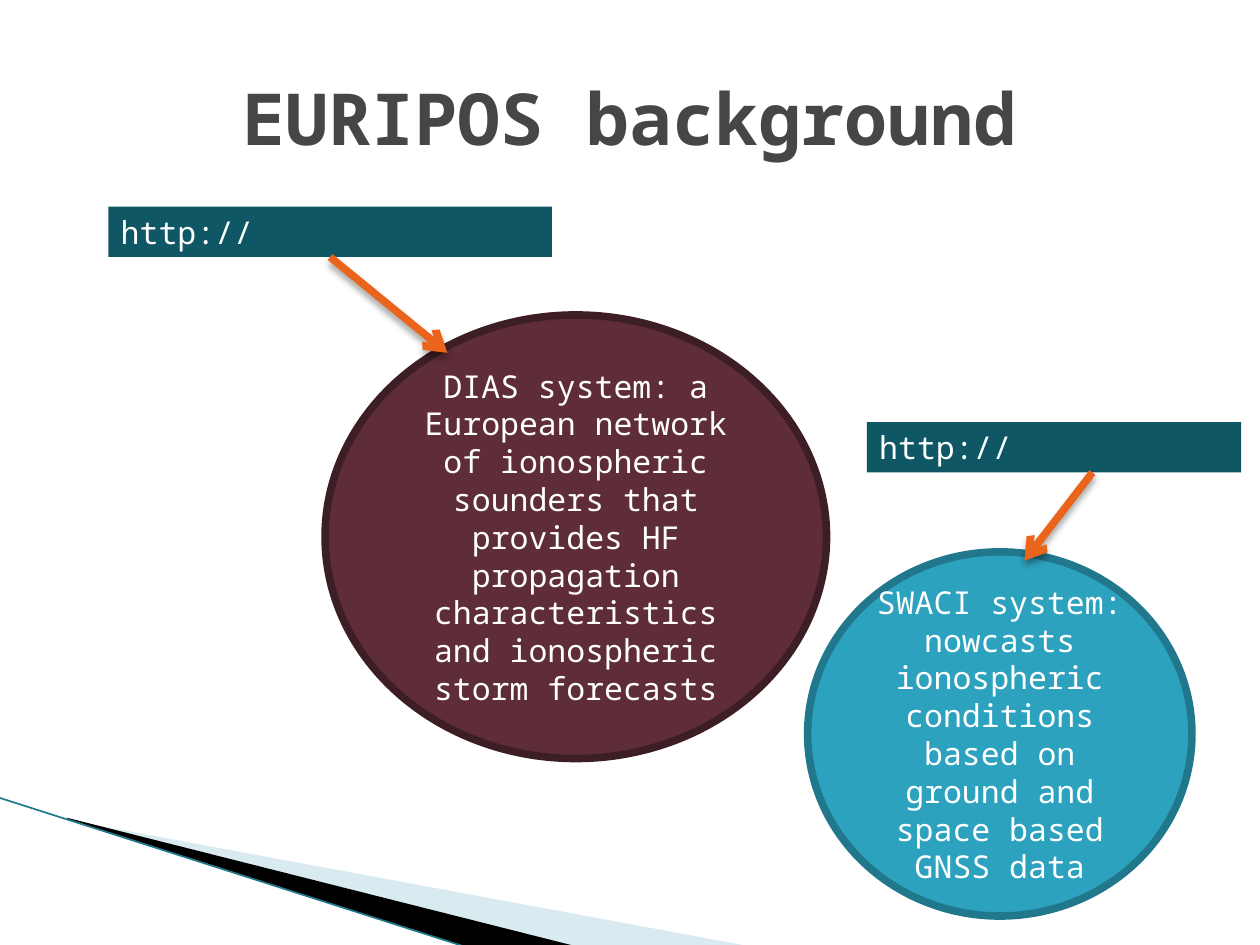
from typing import NamedTuple

from lxml import etree
from pptx import Presentation
from pptx.dml.color import RGBColor
from pptx.enum.shapes import MSO_CONNECTOR as CONN, MSO_SHAPE as SHAPE
from pptx.enum.text import MSO_ANCHOR as ANCHOR, PP_ALIGN as ALIGN
from pptx.oxml import parse_xml
from pptx.oxml.ns import nsdecls, qn
from pptx.util import Inches, Pt

FONT = "Noto Sans Mono"
LINE_WIDTH = 4.33
COLORS = {
    "title": "464646", "text": "FFFFFF", "address": "105766", "arrow": "EB641B",
    "dias": "5E2D37", "dias_edge": "3E1E25",
    "swaci": "2DA2BF", "swaci_edge": "21788D",
    "pale": "A0CBDC", "black": "000000", "edge": "21788D",
}


class Box(NamedTuple):
    text: str
    left: float
    top: float
    width: float
    height: float
    fill: str
    edge: str = ""


class Arrow(NamedTuple):
    x1: float
    y1: float
    x2: float
    y2: float


class Wedge(NamedTuple):
    points: list[tuple[float, float]]
    fill: str
    opacity: int = 100


WEDGES = [
    Wedge([(0.55, 6.51), (5.95, 7.51), (4.56, 7.51), (0.55, 6.5)], "pale", 40),
    Wedge([(0.53, 6.49), (4.57, 7.51), (3.72, 7.52), (0.54, 6.5)], "black"),
]
SYSTEMS = [
    Box("DIAS system: a European network of ionospheric sounders that provides "
        "HF propagation characteristics and ionospheric storm forecasts",
        2.58, 2.5, 3.98, 3.52, "dias", "dias_edge"),
    Box("SWACI system: nowcasts ionospheric conditions based on ground and "
        "space based GNSS data",
        6.41, 4.38, 3.05, 2.89, "swaci", "swaci_edge"),
]
ADDRESSES = [
    Box("http://", 0.86, 1.64, 3.52, 0.4, "address"),
    Box("http://", 6.88, 3.35, 2.97, 0.4, "address"),
]
ARROWS = [Arrow(2.62, 2.04, 3.55, 2.8), Arrow(8.67, 3.75, 8.13, 4.45)]


def rgb(name: str) -> RGBColor:
    return RGBColor.from_string(COLORS[name])


def write(sp, text: str, *, size=18, color="text", bold=False,
          align=ALIGN.CENTER, anchor=ANCHOR.MIDDLE) -> None:
    tf = sp.text_frame
    tf.word_wrap = True
    tf.vertical_anchor = anchor
    p = tf.paragraphs[0]
    p.alignment = align
    r = p.add_run()
    r.text = text
    r.font.name, r.font.size, r.font.bold = FONT, Pt(size), bold
    r.font.color.rgb = rgb(color)


def add_box(s, box: Box, kind: SHAPE, **text_format) -> None:
    sp = s.shapes.add_shape(kind, *map(Inches, box[1:5]))
    sp.shadow.inherit = False
    sp.fill.solid()
    sp.fill.fore_color.rgb = rgb(box.fill)
    if box.edge:
        sp.line.color.rgb = rgb(box.edge)
        sp.line.width = Pt(LINE_WIDTH)
    else:
        sp.line.fill.background()
    write(sp, box.text, **text_format)


def add_wedge(s, wedge: Wedge) -> None:
    points = [(Inches(x), Inches(y)) for x, y in wedge.points]
    builder = s.shapes.build_freeform(*points[0])
    builder.add_line_segments(points[1:], close=True)
    sp = builder.convert_to_shape()
    sp.shadow.inherit = False
    sp.line.fill.background()
    sp.fill.solid()
    sp.fill.fore_color.rgb = rgb(wedge.fill)
    if wedge.opacity < 100:
        clr = sp._element.spPr.find(f".//{qn('a:srgbClr')}")
        etree.SubElement(clr, qn("a:alpha"), val=str(wedge.opacity * 1000))


def add_line(s, ends: tuple, color: str, width: float):
    """Draw a straight line whose shadow is switched off by an empty effect list."""
    line = s.shapes.add_connector(CONN.STRAIGHT, *map(Inches, ends))
    line.line.color.rgb = rgb(color)
    line.line.width = Pt(width)
    effects = etree.SubElement(line._element.spPr, qn("a:effectLst"))
    return line, effects


def add_arrow(s, arrow: Arrow) -> None:
    line, effects = add_line(s, arrow, "arrow", LINE_WIDTH)
    ln = line._element.spPr.find(qn("a:ln"))
    etree.SubElement(ln, qn("a:tailEnd"), type="arrow")
    effects.append(parse_xml(
        f'<a:outerShdw {nsdecls("a")} blurRad="{Pt(4)}" dist="{Pt(3)}" '
        'dir="5400000" rotWithShape="0"><a:srgbClr val="000000">'
        '<a:alpha val="35000"/></a:srgbClr></a:outerShdw>'))


def main() -> None:
    prs = Presentation()
    prs.slide_width, prs.slide_height = Inches(10), Inches(7.5)
    s = prs.slides.add_slide(prs.slide_layouts[6])

    for wedge in WEDGES:
        add_wedge(s, wedge)
    add_line(s, (-0.01, 6.33, 3.71, 7.52), "edge", 0.95)

    title = s.shapes.add_textbox(*map(Inches, (0.5, 0.3, 9, 1.25)))
    write(title, "EURIPOS background", size=41, color="title", bold=True)

    for system in SYSTEMS:
        add_box(s, system, SHAPE.OVAL)
    for address, arrow in zip(ADDRESSES, ARROWS):
        add_box(s, address, SHAPE.RECTANGLE, align=ALIGN.LEFT, anchor=ANCHOR.TOP)
        add_arrow(s, arrow)

    prs.save("out.pptx")


if __name__ == "__main__":
    main()
